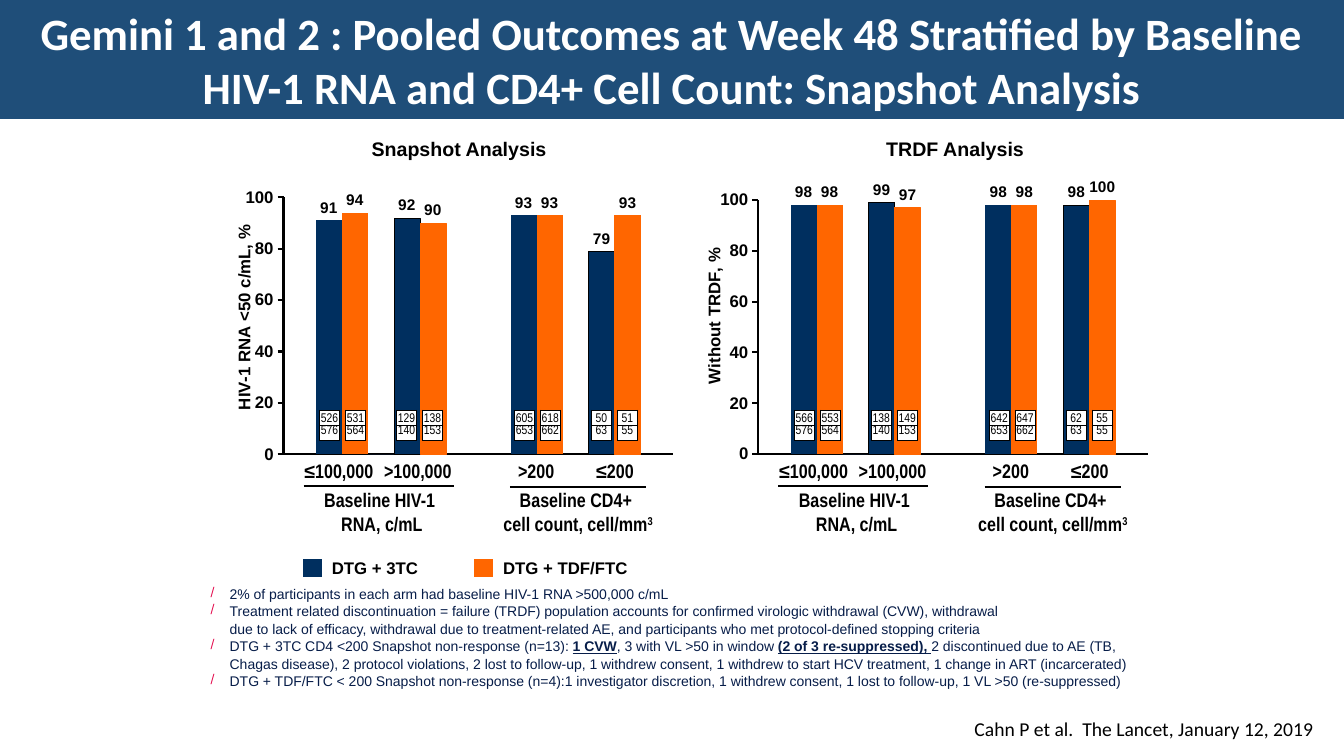
from lxml.etree import SubElement
from pptx import Presentation
from pptx.chart.data import CategoryChartData
from pptx.dml.color import RGBColor
from pptx.enum.chart import XL_CHART_TYPE, XL_LABEL_POSITION, XL_TICK_LABEL_POSITION, XL_TICK_MARK
from pptx.enum.shapes import MSO_CONNECTOR, MSO_SHAPE
from pptx.enum.text import MSO_ANCHOR, MSO_AUTO_SIZE, PP_ALIGN
from pptx.oxml.ns import qn
from pptx.util import Pt

NAVY, ORANGE, BLACK, WHITE = "002F5F", "FF6600", "000000", "FFFFFF"
BOLD12 = {"name": "Arial", "size": Pt(12), "bold": True}
LABEL = {"name": "Arial", "size": Pt(11), "bold": True}
HEADING = {"name": "Arial", "size": Pt(14), "bold": True}
NARROW = {"name": "Arial Narrow", "size": Pt(14), "bold": True}
COUNT = {"name": "Arial Narrow", "size": Pt(9)}
NOTE = {"name": "Arial", "size": Pt(10)}
STRONG = {"bold": True, "underline": True}
NO_MARGIN = dict.fromkeys(("margin_left", "margin_top", "margin_right", "margin_bottom"), 0)


def rgb(value):
    return RGBColor.from_string(value)


def apply(target, formats):
    for name, value in formats.items():
        setattr(target, name, value)


def set_layout(parent, **values):
    layout = parent.find(qn("c:layout"))
    if layout is None:
        layout = SubElement(parent, qn("c:layout"))
        parent.insert(0, layout)
    manual = SubElement(layout, qn("c:manualLayout"))
    for name, value in values.items():
        SubElement(manual, qn(f"c:{name}"), val=str(value))


class Deck:
    """Holds the slide and the style of its elements."""

    def __init__(self):
        self.prs = Presentation()
        apply(self.prs, {"slide_width": Pt(960), "slide_height": Pt(540)})
        self.s = self.prs.slides.add_slide(self.prs.slide_layouts[6])

    def add_runs(self, p, runs, font, color=BLACK, align=PP_ALIGN.LEFT):
        p.alignment = align
        for text, extra in runs:
            for i, line in enumerate(text.split("\n")):
                if i:
                    p.add_line_break()
                    SubElement(p._p[-1], qn("a:rPr"), sz=str(int(font["size"].pt * 100)))
                r = p.add_run()
                r.text = line
                apply(r.font, {**font, **extra})
                r.font.color.rgb = rgb(color)
        return p

    def text(self, box, runs, font, align=PP_ALIGN.LEFT, wrap=True, margins=NO_MARGIN):
        tf = self.s.shapes.add_textbox(*map(Pt, box)).text_frame
        apply(tf, {"word_wrap": wrap, "auto_size": MSO_AUTO_SIZE.SHAPE_TO_FIT_TEXT, **margins})
        return self.add_runs(tf.paragraphs[0], runs, font, align=align)

    def banner(self, box, text):
        sp = self.s.shapes.add_shape(MSO_SHAPE.RECTANGLE, *map(Pt, box))
        sp.shadow.inherit = False
        sp.fill.solid()
        sp.fill.fore_color.rgb = rgb("1F4E79")
        sp.line.fill.background()
        apply(sp.text_frame, {"word_wrap": True, "vertical_anchor": MSO_ANCHOR.MIDDLE})
        font = {"name": "Calibri", "size": Pt(32), "bold": True}
        self.add_runs(sp.text_frame.paragraphs[0], [(text, {})], font, WHITE, PP_ALIGN.CENTER)

    def rule(self, x1, x2, y):
        line = self.s.shapes.add_connector(MSO_CONNECTOR.STRAIGHT, Pt(x1), Pt(y), Pt(x2), Pt(y))
        line.line.width = Pt(1.5)
        line.line.color.rgb = rgb(BLACK)
        SubElement(line._element.spPr, qn("a:effectLst"))

    def table(self, box, widths, rows):
        tbl = self.s.shapes.add_table(rows, len(widths), *map(Pt, box)).table
        apply(tbl, {"first_row": False, "horz_banding": False})
        for column, width in zip(tbl.columns, widths):
            column.width = Pt(width)
        return tbl

    def cell(self, cell, fill, sides, border, width, **formats):
        apply(cell, {**NO_MARGIN, **formats})
        for side in sides:
            ln = SubElement(cell._tc.get_or_add_tcPr(), qn(f"a:ln{side}"), w=str(Pt(width)))
            SubElement(SubElement(ln, qn("a:solidFill")), qn("a:srgbClr"), val=border)
        cell.fill.solid()
        cell.fill.fore_color.rgb = rgb(fill)
        return cell.text_frame.paragraphs[0]

    def fraction(self, x, y, counts):
        tbl = self.table((x, y, 14.4, 21.6), [14.4], 2)
        anchors = MSO_ANCHOR.BOTTOM, MSO_ANCHOR.TOP
        for i, (count, anchor) in enumerate(zip(counts, anchors)):
            p = self.cell(tbl.cell(i, 0), WHITE, "LRTB", BLACK, 0.5, vertical_anchor=anchor)
            self.add_runs(p, [(count, {})], COUNT, align=PP_ALIGN.CENTER)

    def legend(self, box, widths, entries):
        tbl = self.table(box, widths, 1)
        for i, (name, color) in enumerate(entries):
            p = self.cell(tbl.cell(0, 2 * i), color, "B", WHITE, 3)
            SubElement(p._p, qn("a:endParaRPr"), sz="1000")
            p = self.cell(tbl.cell(0, 2 * i + 1), WHITE, "B", WHITE, 3,
                          margin_left=Pt(6.6), vertical_anchor=MSO_ANCHOR.MIDDLE)
            self.add_runs(p, [(name, {})], BOLD12)

    def notes(self, box, items):
        tf = self.s.shapes.add_textbox(*map(Pt, box)).text_frame
        apply(tf, {"word_wrap": True, **NO_MARGIN})
        for i, runs in enumerate(items):
            p = tf.add_paragraph() if i else tf.paragraphs[0]
            pPr = p._p.get_or_add_pPr()
            p.line_spacing = 1.04
            pPr.set("marL", str(Pt(23)))
            pPr.set("indent", str(Pt(-13.7)))
            SubElement(SubElement(pPr, qn("a:buClr")), qn("a:srgbClr"), val="E30046")
            SubElement(pPr, qn("a:buChar"), char="/")
            self.add_runs(p, runs, NOTE, "071D49")

    def chart(self, box, title, title_at, plot_y, plot_h, values):
        data = CategoryChartData()
        data.categories = ["1", "2"]
        for i, pair in enumerate(values, 1):
            data.add_series(f"Series {i}", pair)
        chart = self.s.shapes.add_chart(XL_CHART_TYPE.COLUMN_CLUSTERED, *map(Pt, box), data).chart
        apply(chart, {"has_legend": False, "has_title": False})
        apply(chart.font, {"name": "Calibri", "size": Pt(18)})
        chart.font.color.rgb = rgb(BLACK)
        plot = chart.plots[0]
        apply(plot, {"gap_width": 250, "overlap": 0, "vary_by_categories": False})
        set_layout(chart._chartSpace.chart.plotArea, layoutTarget="inner", xMode="edge",
                   yMode="edge", x=0.145, y=plot_y, w=0.846, h=plot_h)
        cat, val = chart.category_axis, chart.value_axis
        for axis, tick in (cat, XL_TICK_MARK.NONE), (val, XL_TICK_MARK.OUTSIDE):
            apply(axis, {"has_major_gridlines": False, "major_tick_mark": tick,
                         "minor_tick_mark": XL_TICK_MARK.NONE})
            apply(axis.tick_labels.font, BOLD12)
            axis.format.line.width = Pt(1.5)
            axis.format.line.color.rgb = rgb(BLACK)
        cat.tick_label_position = XL_TICK_LABEL_POSITION.NONE
        apply(val, {"minimum_scale": 0, "maximum_scale": 100, "major_unit": 20, "has_title": True})
        apply(val.tick_labels, {"number_format": "0", "number_format_is_linked": False})
        self.add_runs(val.axis_title.text_frame.paragraphs[0], [(title, {})], BOLD12, align=None)
        heading = val.axis_title._element
        heading.find(".//" + qn("a:bodyPr")).set("rot", "-5400000")
        set_layout(heading, xMode="edge", yMode="edge", x=title_at[0], y=title_at[1])
        colors = (NAVY, None), (ORANGE, None), ("4472C4", None), (NAVY, BLACK), (ORANGE, ORANGE)
        for series, (fill, outline) in zip(plot.series, colors):
            series.format.fill.solid()
            series.format.fill.fore_color.rgb = rgb(fill)
            if outline:
                series.format.line.width = Pt(0.25)
                series.format.line.color.rgb = rgb(outline)
            if None not in series.values:
                labels = series.data_labels
                apply(labels, {"show_value": True, "position": XL_LABEL_POSITION.OUTSIDE_END,
                               "number_format": "0", "number_format_is_linked": False})
                apply(labels.font, LABEL)
                labels.font.color.rgb = rgb(BLACK)

    def panel(self, x, heading, heading_x, fractions, **chart):
        self.chart((x, 125.3, 329, 206.6), **chart)
        self.text((heading_x, 97.9, 251.3, 17.3), [(heading, {})], HEADING, PP_ALIGN.CENTER)
        levels = ("≤100,000", 62.6, 49.7), (">100,000", 119.5, 49), (">200", 215.2, 26), ("≤200", 271, 27.4)
        for name, dx, width in levels:
            self.text((x + dx, 327.6, width, 17.3), [(name, {})], NARROW, wrap=False)
        groups = (
            ("Baseline HIV-1 \nRNA, c/mL", "", 76.3, 83.5, 62, 169.2, 347.4),
            ("Baseline CD4+ \ncell count, cell/mm", "3", 203.8, 108.7, 209.5, 306.7, 348.1),
        )
        for name, power, dx, width, start, end, y in groups:
            self.rule(x + start, x + end, y)
            p = self.text((x + dx, 348.8, width, 33.8), [(name, {})], NARROW, PP_ALIGN.CENTER, False)
            if power:
                self.add_runs(p, [(power, {})], NARROW, align=PP_ALIGN.CENTER)
                p.runs[-1].font._element.set("baseline", "30000")
        for i, pair in enumerate(fractions.split()):
            group, level, arm = i // 4, i // 2 % 2, i % 2
            self.fraction(x + 73.4 + 139.2 * group + 55 * level + 18.5 * arm, 293, pair.split("/"))


def main():
    deck = Deck()
    deck.banner((0, 0, 960, 85), "Gemini 1 and 2 : Pooled Outcomes at Week 48 Stratified by Baseline "
                "HIV-1 RNA and CD4+ Cell Count: Snapshot Analysis")
    deck.text((689, 508.3, 270.7, 24.5), [("Cahn P et al.  The Lancet, January 12, 2019", {})],
              {"name": "Calibri", "size": Pt(14)}, margins={})
    deck.panel(493.9, "TRDF Analysis", 556.6,
               "566/576 553/564 138/140 149/153 642/653 647/662 62/63 55/55",
               title="Without TRDF, %", title_at=(0.02, 0.24), plot_y=0.085, plot_h=0.879,
               values=[(98, 98), (98, 98), (0, None), (99, 98), (97, 100)])
    deck.panel(154.8, "Snapshot Analysis", 202.3,
               "526/576 531/564 129/140 138/153 605/653 618/662 50/63 51/55",
               title="HIV-1 RNA <50 c/mL, %", title_at=(0.03, 0.16), plot_y=0.076, plot_h=0.889,
               values=[(91, 93), (94, 93), (0, None), (92, 79), (90, 93)])
    deck.legend((216, 398.9, 252, 14.4), (14.4, 108, 14.4, 115.2),
                [("DTG + 3TC", NAVY), ("DTG + TDF/FTC", ORANGE)])
    deck.notes((141.1, 417.6, 667.4, 66.2), [
        [("2% of participants in each arm had baseline HIV-1 RNA >500,000 c/mL", {})],
        [("Treatment related discontinuation = failure (TRDF) population accounts for confirmed "
          "virologic withdrawal (CVW), withdrawal\ndue to lack of efficacy, withdrawal due to "
          "treatment-related AE, and participants who met protocol-defined stopping criteria", {})],
        [("DTG + 3TC CD4 <200 Snapshot non-response (n=13): ", {}), ("1 CVW", STRONG),
         (", 3 with VL >50 in window ", {}), ("(2 of 3 re-suppressed), ", STRONG),
         ("2 discontinued due to AE (TB, Chagas disease), 2 protocol violations, 2 lost to follow-up, "
          "1 withdrew consent, 1 withdrew to start HCV treatment, 1 change in ART (incarcerated)", {})],
        [("DTG + TDF/FTC < 200 Snapshot non-response (n=4):1 investigator discretion, "
          "1 withdrew consent, 1 lost to follow-up, 1 VL >50 (re-suppressed)", {})],
    ])
    deck.prs.save("out.pptx")


if __name__ == "__main__":
    main()
